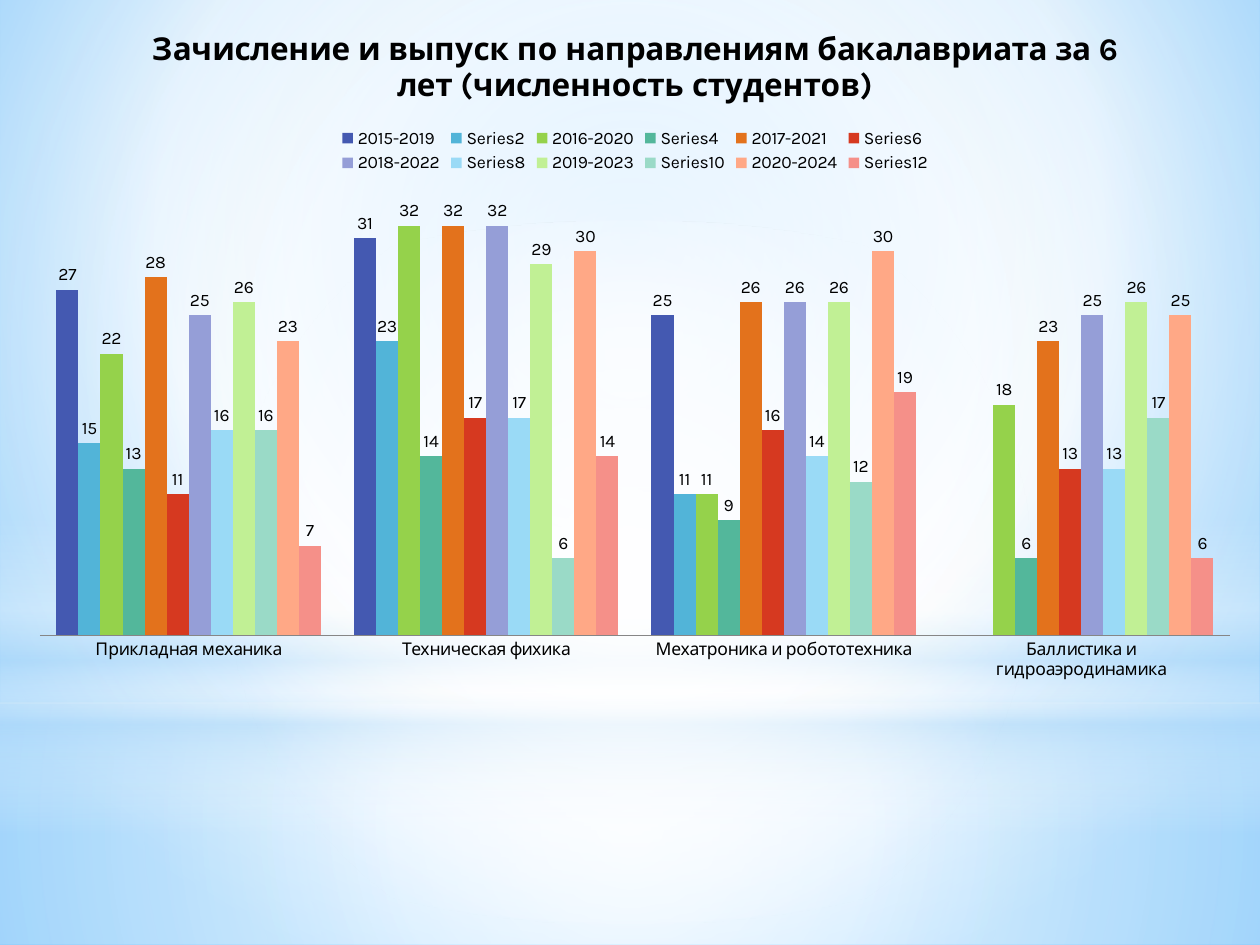
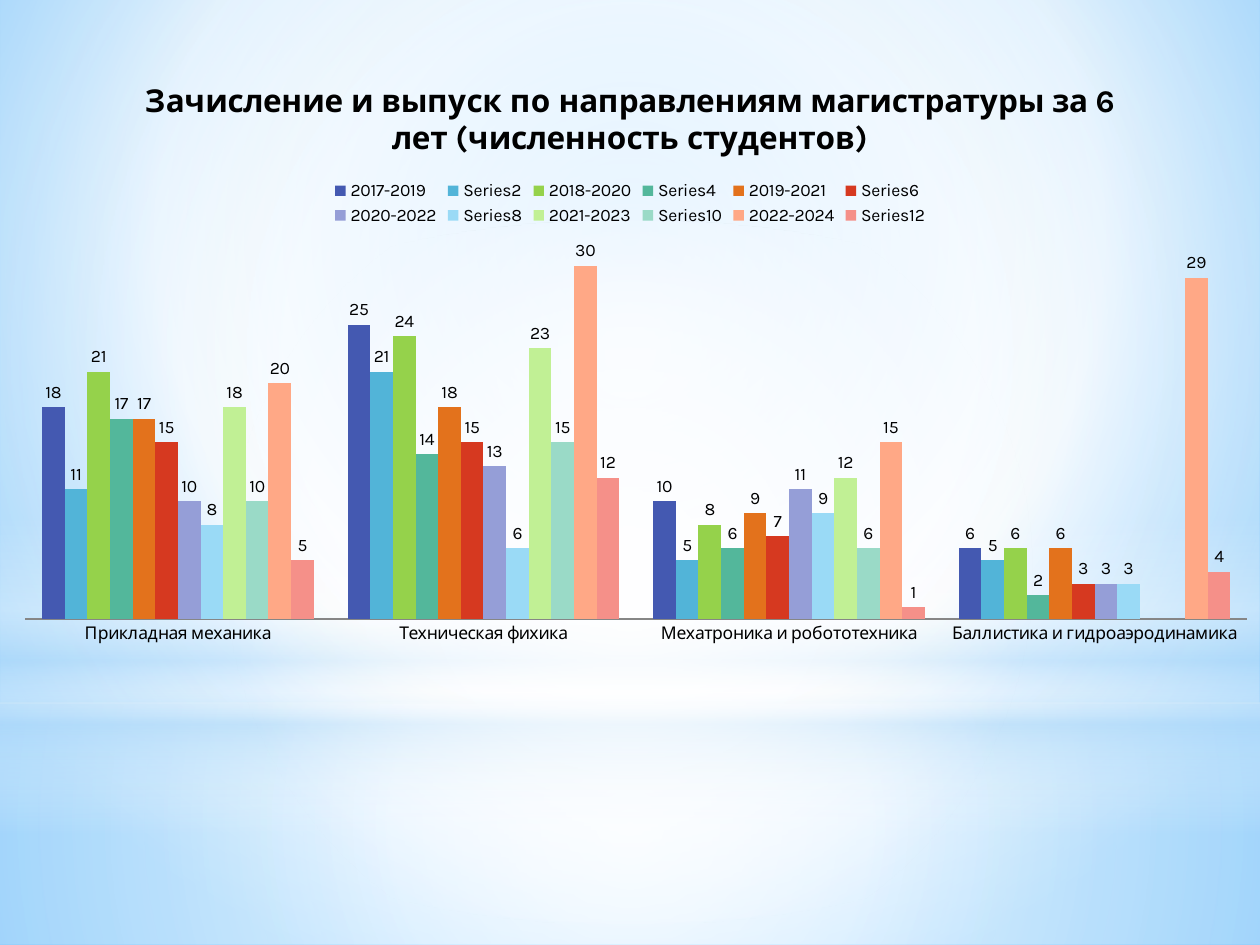
import pptx
import pptx.chart.data
import pptx.dml.color
import pptx.enum.chart
import pptx.enum.shapes
import pptx.oxml
import pptx.oxml.ns
import pptx.util

Inches = pptx.util.Inches
Pt = pptx.util.Pt
qn = pptx.oxml.ns.qn

COLORS = {
    "text": "000000", "axis": "868686", "white": "FFFFFF", "haze": "B4DCFA",
    "sky": "9ED5FF", "deep sky": "5BB9FF",
    "blue": "4459B1", "cyan": "52B4D8", "green": "95D24B",
    "teal": "53B79B", "orange": "E3721C", "red": "D63920",
    "pale blue": "959ED7", "pale cyan": "9ADAF6", "pale green": "C1F095",
    "pale teal": "9ADAC7", "pale orange": "FFA886", "pale red": "F59089",
}
SERIES_COLORS = ["blue", "cyan", "green", "teal", "orange", "red",
                 "pale blue", "pale cyan", "pale green", "pale teal", "pale orange", "pale red"]
FONT = "Karla"
BODY = {"name": FONT, "size": Pt(10), "bold": False}
TITLE = {"name": FONT, "size": Pt(18), "bold": True}
AXIS_MAX = 35

# Gradient stops: position %, colour, opacity %; focus is left, top, right, bottom %
SKY = {"stops": [(0, "sky", 100), (60, "white", 100), (100, "deep sky", 100)],
       "focus": (20, 10, 20, 60)}
CENTER = (50, 50, 50, 50)
HORIZON = 5.58
BACKDROP = [
    ("RECTANGLE", (0, HORIZON, 10, 7.5 - HORIZON),
     {"stops": [(0, "white", 91), (37, "white", 76), (100, "haze", 79)], "focus": CENTER}),
    ("RECTANGLE", (0, 0, 10, HORIZON),
     {"stops": [(0, "white", 89), (48, "white", 62), (100, "haze", 79)], "focus": CENTER}),
    ("RECTANGLE", (0, 4.12, 10, 2.5),
     {"stops": [(0, "white", 0), (29, "white", 30), (45, "haze", 40),
                (55, "white", 26), (65, "haze", 60), (100, "white", 0)], "angle": 90}),
    ("OVAL", (0, 1.75, 10, 5.58),
     {"stops": [(0, "white", 100), (56, "white", 0)], "focus": CENTER}),
]

PROGRAMS = ["Прикладная механика", "Техническая фихика",
            "Мехатроника и робототехника", "Баллистика и гидроаэродинамика"]

# Each cohort: years, students enrolled, students graduated (one value per program)
CHARTS = [
    {"title": "Зачисление и выпуск по направлениям бакалавриата за 6 лет (численность студентов)",
     "at": (0.12, 0.01, 9.84, 5.47),
     "plot": (0.02, 0.27, 0.96, 0.65),
     "cohorts": [
         ("2015-2019", (27, 31, 25, None), (15, 23, 11, None)),
         ("2016-2020", (22, 32, 11, 18), (13, 14, 9, 6)),
         ("2017-2021", (28, 32, 26, 23), (11, 17, 16, 13)),
         ("2018-2022", (25, 32, 26, 25), (16, 17, 14, 13)),
         ("2019-2023", (26, 29, 26, 26), (16, 6, 12, 17)),
         ("2020-2024", (23, 30, 30, 25), (7, 14, 19, 6))]},
    {"title": "Зачисление и выпуск по направлениям магистратуры за 6 лет (численность студентов)",
     "at": (0, 0.44, 10, 4.81),
     "plot": (0.02, 0.25, 0.97, 0.68),
     "cohorts": [
         ("2017-2019", (18, 25, 10, 6), (11, 21, 5, 5)),
         ("2018-2020", (21, 24, 8, 6), (17, 14, 6, 2)),
         ("2019-2021", (17, 18, 9, 6), (15, 15, 7, 3)),
         ("2020-2022", (10, 13, 11, 3), (8, 6, 9, 3)),
         ("2021-2023", (18, 23, 12, None), (10, 15, 6, None)),
         ("2022-2024", (20, 30, 15, 29), (5, 12, 1, 4))]},
]


def rgb(name):
    return pptx.dml.color.RGBColor.from_string(COLORS[name])


def set_font(font, values):
    for key, value in values.items():
        setattr(font, key, value)
    font.color.rgb = rgb("text")


def set_gradient(fill, element, stops, focus=None, angle=0):
    """Replace the first gradient inside element with the given stops."""
    fill.gradient()
    stop_xml = "".join(
        f'<a:gs pos="{position * 1000}"><a:srgbClr val="{COLORS[color]}">'
        f'<a:alpha val="{opacity * 1000}"/></a:srgbClr></a:gs>'
        for position, color, opacity in stops)
    if focus:
        sides = " ".join(f'{side}="{value * 1000}"' for side, value in zip("ltrb", focus))
        direction = f'<a:path path="circle"><a:fillToRect {sides}/></a:path>'
    else:
        direction = f'<a:lin ang="{angle * 60000}" scaled="0"/>'
    gradient = pptx.oxml.parse_xml(
        f'<a:gradFill {pptx.oxml.ns.nsdecls("a")} rotWithShape="1">'
        f'<a:gsLst>{stop_xml}</a:gsLst>{direction}</a:gradFill>')
    old = next(element.iter(qn("a:gradFill")))
    old.getparent().replace(old, gradient)


def build_backdrop(master, slide):
    """Draw the backdrop shapes on a slide and move them to the back of the master."""
    set_gradient(master.background.fill, master.element, **SKY)
    tree = master.element.cSld.spTree
    for index, (kind, place, gradient) in enumerate(BACKDROP):
        shape = slide.shapes.add_shape(
            getattr(pptx.enum.shapes.MSO_SHAPE, kind), *map(Inches, place))
        shape.shadow.inherit = False
        shape.line.fill.background()
        set_gradient(shape.fill, shape.element.spPr, **gradient)
        shape.element.nvSpPr.cNvPr.set("id", str(20 + index))
        tree.insert(2 + index, shape.element)


def set_plot_area(chart, place):
    area = next(chart.element.iter(qn("c:plotArea")))
    for old in area.findall(qn("c:layout")):
        area.remove(old)
    sizes = "".join(f'<c:{key} val="{value}"/>' for key, value in zip("xywh", place))
    area.insert(0, pptx.oxml.parse_xml(
        f'<c:layout {pptx.oxml.ns.nsdecls("c")}><c:manualLayout>'
        '<c:layoutTarget val="inner"/><c:xMode val="edge"/><c:yMode val="edge"/>'
        f'{sizes}</c:manualLayout></c:layout>'))


def add_student_chart(slide, content):
    data = pptx.chart.data.CategoryChartData()
    data.categories = PROGRAMS
    for index, (years, enrolled, graduated) in enumerate(content["cohorts"], 1):
        data.add_series(years, enrolled)
        data.add_series(f"Series{2 * index}", graduated)
    chart = slide.shapes.add_chart(
        pptx.enum.chart.XL_CHART_TYPE.COLUMN_CLUSTERED,
        *map(Inches, content["at"]), data).chart
    set_font(chart.font, BODY)
    set_plot_area(chart, content["plot"])

    chart.has_title = True
    para = chart.chart_title.text_frame.paragraphs[0]
    span = para.add_run()
    span.text = content["title"]
    set_font(span.font, TITLE)
    chart.chart_title.include_in_layout = False

    chart.has_legend = True
    chart.legend.position = pptx.enum.chart.XL_LEGEND_POSITION.TOP
    chart.legend.include_in_layout = False
    set_font(chart.legend.font, BODY)

    chart.value_axis.visible = False
    chart.value_axis.has_major_gridlines = False
    chart.value_axis.minimum_scale = 0
    chart.value_axis.maximum_scale = AXIS_MAX
    chart.category_axis.major_tick_mark = pptx.enum.chart.XL_TICK_MARK.NONE
    chart.category_axis.format.line.color.rgb = rgb("axis")
    set_font(chart.category_axis.tick_labels.font, BODY)

    plot = chart.plots[0]
    plot.gap_width = 150
    plot.overlap = 0
    plot.vary_by_categories = False
    for series, color in zip(plot.series, SERIES_COLORS):
        series.format.fill.solid()
        series.format.fill.fore_color.rgb = rgb(color)
        labels = series.data_labels
        labels.show_value = True
        labels.position = pptx.enum.chart.XL_LABEL_POSITION.OUTSIDE_END
        set_font(labels.font, BODY)


def main():
    deck = pptx.Presentation()
    deck.slide_width, deck.slide_height = Inches(10), Inches(7.5)
    slides = [deck.slides.add_slide(deck.slide_layouts[6]) for _ in CHARTS]
    build_backdrop(deck.slide_master, slides[0])
    for slide, content in zip(slides, CHARTS):
        add_student_chart(slide, content)
    deck.save("out.pptx")


if __name__ == "__main__":
    main()
